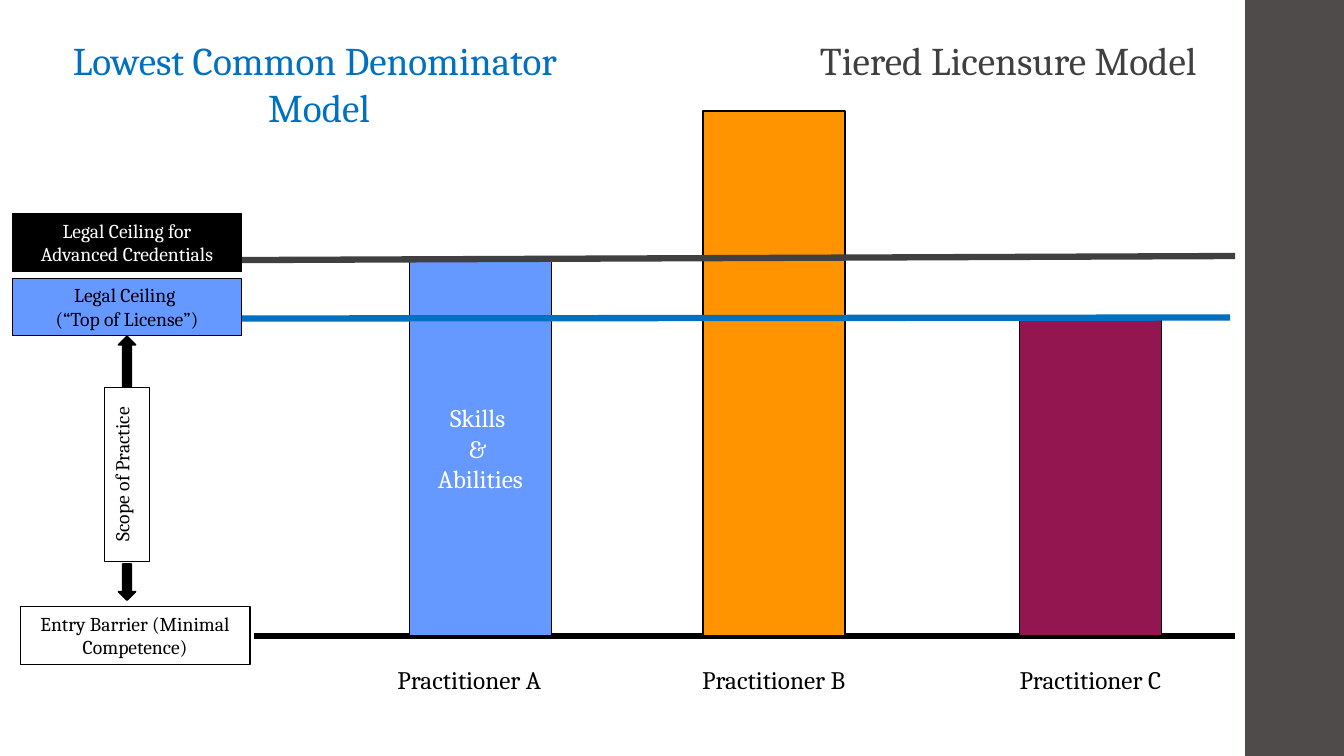
from dataclasses import dataclass
from typing import NamedTuple

from lxml import etree
from pptx import Presentation
from pptx import util as u
from pptx.dml.color import RGBColor
from pptx.enum import shapes, text
from pptx.oxml.ns import qn

PX = 9144  # 100 px to the inch
BASE = 631  # floor on which the bars stand


@dataclass(frozen=True)
class Theme:
    font: str = "Cambria"
    black: str = "000000"
    white: str = "FFFFFF"
    side: str = "4F4B4B"
    sky: str = "6699FF"
    gold: str = "FF9300"
    wine: str = "941651"
    blue: str = "0070C0"
    gray: str = "404040"
    title: int = 28
    label: int = 18
    note: int = 14
    thin: float = 0.75
    edge: float = 1.1
    rule: float = 4.5


T = Theme()


class Box(NamedTuple):
    left: int
    top: int
    width: int
    height: int


class Bar(NamedTuple):
    left: int
    top: int
    fill: str
    lines: tuple[str, ...]


class Label(NamedTuple):
    box: Box
    lines: tuple[str, ...]
    size: int
    color: str


class Note(NamedTuple):
    box: Box
    lines: tuple[str, ...]
    fill: str | None
    color: str
    vert: bool


class Rule(NamedTuple):
    x1: int
    y1: int
    x2: int
    y2: int
    color: str


class Arrow(NamedTuple):
    box: Box
    turn: int


FLOOR = Rule(252, BASE, 1225, BASE, T.black)
BARS = [
    Bar(406, 258, T.sky, ("Skills ", "& ", "Abilities")),
    Bar(697, 110, T.gold, ()),
    Bar(1011, 316, T.wine, ()),
]
LABELS = [
    Label(Box(left, 654, 163, 71), (f"Practitioner {name}",), T.label, T.black)
    for name, left in zip("ABC", (384, 686, 1000))
]
ARROWS = [Arrow(Box(101, 350, 50, 17), 270), Arrow(Box(108, 569, 36, 17), 90)]
LIMITS = [
    Rule(240, 316, 1220, 315, T.blue),
    Rule(240, 258, 1225, 254, T.gray),
]
TITLES = [
    Label(Box(25, 31, 583, 104), ("Lowest Common Denominator ", "Model"),
          T.title, T.blue),
    Label(Box(775, 31, 450, 57), ("Tiered Licensure Model",), T.title, T.gray),
]
NOTES = [
    Note(Box(104, 384, 44, 173), ("Scope of Practice",), None, T.black, True),
    Note(Box(20, 602, 228, 57), ("Entry Barrier (Minimal Competence)",),
         None, T.black, False),
    Note(Box(12, 276, 228, 57), ("Legal Ceiling ", "(“Top of License”)"),
         T.sky, T.black, False),
    Note(Box(12, 212, 228, 57), ("Legal Ceiling for Advanced Credentials",),
         T.black, T.white, False),
]


def rgb(color: str) -> RGBColor:
    return RGBColor.from_string(color)


def scale(*sizes: int) -> list[int]:
    return [size * PX for size in sizes]


def write(shape, lines: tuple[str, ...], size: int, color: str,
          wrap: bool = True, anchor=text.MSO_ANCHOR.TOP) -> None:
    frame = shape.text_frame
    frame.word_wrap = wrap
    frame.vertical_anchor = anchor
    frame.text = "\n".join(lines)
    for para in frame.paragraphs:
        para.alignment = text.PP_ALIGN.CENTER
        para.font.name = T.font
        para.font.size = u.Pt(size)
        para.font.color.rgb = rgb(color)


def draw(slide, box: Box, fill: str | None, line: float = 0,
         kind=shapes.MSO_SHAPE.RECTANGLE):
    """Add a preset shape; a zero line means no outline."""
    shape = slide.shapes.add_shape(kind, *scale(*box))
    shape.shadow.inherit = False
    if fill:
        shape.fill.solid()
        shape.fill.fore_color.rgb = rgb(fill)
    else:
        shape.fill.background()
    if line:
        shape.line.color.rgb = rgb(T.black)
        shape.line.width = u.Pt(line)
    else:
        shape.line.fill.background()
    return shape


def add_bar(slide, bar: Bar) -> None:
    box = Box(bar.left, bar.top, 141, BASE - bar.top)
    shape = draw(slide, box, bar.fill, T.edge)
    if bar.lines:
        write(shape, bar.lines, T.label, T.white,
              anchor=text.MSO_ANCHOR.MIDDLE)


def add_label(slide, label: Label) -> None:
    shape = slide.shapes.add_textbox(*scale(*label.box))
    write(shape, label.lines, label.size, label.color, wrap=False)


def add_note(slide, note: Note) -> None:
    shape = draw(slide, note.box, note.fill, T.thin)
    write(shape, note.lines, T.note, note.color)
    if note.vert:
        shape.element.txBody.find(qn("a:bodyPr")).set("vert", "vert270")


def add_arrow(slide, arrow: Arrow) -> None:
    shape = draw(slide, arrow.box, T.black, T.edge,
                 shapes.MSO_SHAPE.RIGHT_ARROW)
    shape.rotation = arrow.turn


def add_rule(slide, rule: Rule) -> None:
    ends = scale(rule.x1, rule.y1, rule.x2, rule.y2)
    line = slide.shapes.add_connector(shapes.MSO_CONNECTOR.STRAIGHT, *ends)
    line.line.color.rgb = rgb(rule.color)
    line.line.width = u.Pt(T.rule)
    etree.SubElement(line.element.spPr, qn("a:effectLst"))


def main() -> None:
    deck = Presentation()
    deck.slide_width, deck.slide_height = scale(1333, 750)
    slide = deck.slides.add_slide(deck.slide_layouts[6])
    draw(slide, Box(1235, 0, 98, 750), T.side)
    add_rule(slide, FLOOR)
    for bar in BARS:
        add_bar(slide, bar)
    for arrow in ARROWS:
        add_arrow(slide, arrow)
    for rule in LIMITS:
        add_rule(slide, rule)
    for label in LABELS + TITLES:
        add_label(slide, label)
    for note in NOTES:
        add_note(slide, note)
    deck.save("out.pptx")


if __name__ == "__main__":
    main()
